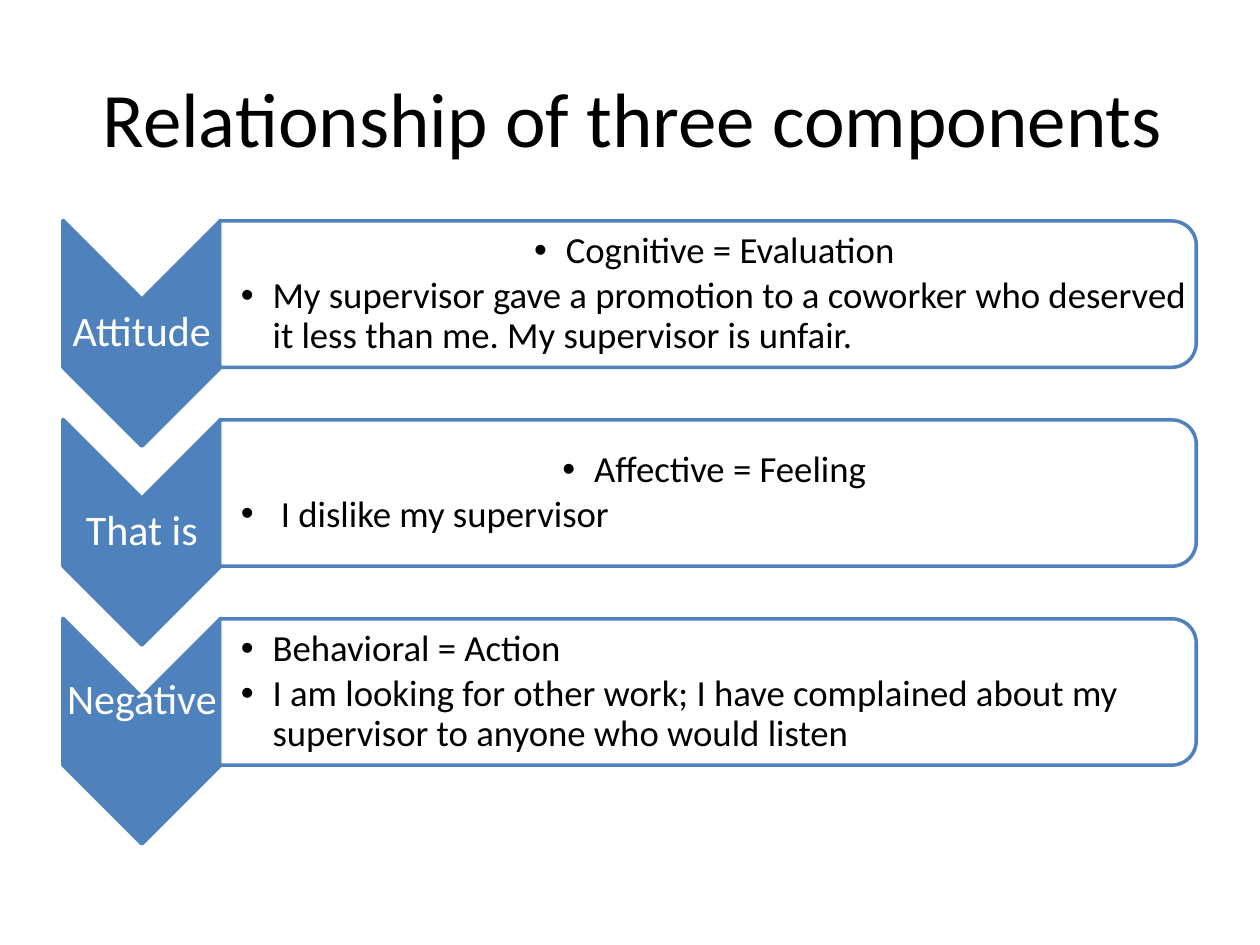
import pptx
import pptx.util
import pptx.dml.color
import pptx.enum.shapes
import pptx.enum.text
import pptx.oxml.ns
import lxml.etree

Cm = pptx.util.Cm
Pt = pptx.util.Pt
SHAPES = pptx.enum.shapes.MSO_SHAPE
ALIGN = pptx.enum.text.PP_ALIGN
COLORS = {"accent": "4F81BD", "panel": "FFFFFF", "label": "FFFFFF", "text": "000000"}
FONT = "Calibri"
ROW_STEP = 4.01
CHEVRON_X, CHEVRON_Y = 2.86, 6.72
PANEL_X, PANEL_Y = 14.27, 5.93

ROWS = [
    ("Attitude", 0, ALIGN.CENTER, [
        "Cognitive = Evaluation",
        "My supervisor gave a promotion to a coworker who deserved it less than me. "
        "My supervisor is unfair."]),
    ("That is", 0, ALIGN.CENTER, [
        "Affective = Feeling",
        " I dislike my supervisor"]),
    ("Negative", -0.61, ALIGN.LEFT, [
        "Behavioral = Action",
        "I am looking for other work; I have complained about my supervisor "
        "to anyone who would listen"]),
]


class SlideBuilder:
    def __init__(self, slide):
        self.slide = slide

    def color(self, name):
        return pptx.dml.color.RGBColor.from_string(COLORS[name])

    def place(self, shape, center_x, center_y, width, height):
        shape.left, shape.top = Cm(center_x - width / 2), Cm(center_y - height / 2)
        shape.width, shape.height = Cm(width), Cm(height)

    def prepare_frame(self, shape, left, other):
        frame = shape.text_frame
        frame.word_wrap = True
        frame.auto_size = pptx.enum.text.MSO_AUTO_SIZE.NONE
        frame.vertical_anchor = pptx.enum.text.MSO_ANCHOR.MIDDLE
        frame.margin_left = Cm(left)
        frame.margin_right = frame.margin_top = frame.margin_bottom = Cm(other)
        return frame

    def add_text(self, paragraph, text, size, color, alignment):
        paragraph.alignment = alignment
        paragraph.space_before = Pt(0)
        run = paragraph.add_run()
        run.text = text
        run.font.name = FONT
        run.font.size = Pt(size)
        run.font.bold = False
        run.font.color.rgb = self.color(color)

    def title(self, text):
        shape = self.slide.shapes.title
        self.place(shape, 12.7, 2.35, 22.86, 3.18)
        frame = self.prepare_frame(shape, 0.25, 0.13)
        self.add_text(frame.paragraphs[0], text, 44, "text", ALIGN.CENTER)

    def turned_shape(self, kind, center_x, center_y, width, height, fill):
        shape = self.slide.shapes.add_shape(kind, 0, 0, 0, 0)
        self.place(shape, center_x, center_y, width, height)
        shape.rotation = 90
        shape.shadow.inherit = False
        shape.fill.solid()
        shape.fill.fore_color.rgb = self.color(fill)
        shape.line.color.rgb = self.color("accent")
        shape.line.width = Pt(2)
        return shape

    def chevron(self, center_y):
        self.turned_shape(SHAPES.CHEVRON, CHEVRON_X, center_y, 4.55, 3.18, "accent")

    def panel(self, center_y):
        shape = self.turned_shape(SHAPES.ROUND_2_SAME_RECTANGLE, PANEL_X, center_y,
                                  2.95, 19.69, "panel")
        qn = pptx.oxml.ns.qn
        fill_color = shape._element.spPr.find(qn("a:solidFill")).find(qn("a:srgbClr"))
        lxml.etree.SubElement(fill_color, qn("a:alpha"), val="90000")

    def label(self, text, center_y):
        shape = self.slide.shapes.add_textbox(0, 0, 0, 0)
        self.place(shape, CHEVRON_X, center_y, 3.18, 1.37)
        frame = self.prepare_frame(shape, 0.04, 0.04)
        paragraph = frame.paragraphs[0]
        paragraph.line_spacing = 0.9
        self.add_text(paragraph, text, 24, "label", ALIGN.CENTER)

    def bullet_list(self, placeholder, center_y, items, first_alignment):
        self.slide.shapes._spTree.append(placeholder._element)
        self.place(placeholder, 14.21, center_y, 19.53, 2.67)
        frame = self.prepare_frame(placeholder, 0.41, 0.03)
        for index, item in enumerate(items):
            paragraph = frame.add_paragraph() if index else frame.paragraphs[0]
            self.add_bullet(paragraph)
            paragraph.line_spacing = 0.9
            paragraph.space_after = Pt(3)
            self.add_text(paragraph, item, 21, "text", ALIGN.LEFT if index else first_alignment)

    def add_bullet(self, paragraph):
        properties = paragraph._p.get_or_add_pPr()
        properties.set("marL", str(Cm(0.64)))
        properties.set("indent", str(-Cm(0.64)))
        qn = pptx.oxml.ns.qn
        lxml.etree.SubElement(properties, qn("a:buFont"), typeface="Arial")
        lxml.etree.SubElement(properties, qn("a:buChar"), char="•")


def main():
    presentation = pptx.Presentation()
    presentation.slide_width, presentation.slide_height = Cm(25.4), Cm(19.05)
    slide = presentation.slides.add_slide(presentation.slide_layouts.get_by_name("Comparison"))
    builder = SlideBuilder(slide)
    builder.title("Relationship of three components")
    bodies = [shape for shape in slide.placeholders if shape.placeholder_format.idx in range(1, 5)]
    for row, (label, label_shift, alignment, items) in enumerate(ROWS):
        offset = row * ROW_STEP
        builder.chevron(CHEVRON_Y + offset)
        builder.label(label, CHEVRON_Y + offset + label_shift)
        builder.panel(PANEL_Y + offset)
        builder.bullet_list(bodies[row], PANEL_Y + offset, items, alignment)
    for spare in bodies[len(ROWS):]:
        spare._element.getparent().remove(spare._element)
    presentation.save("out.pptx")


if __name__ == "__main__":
    main()
